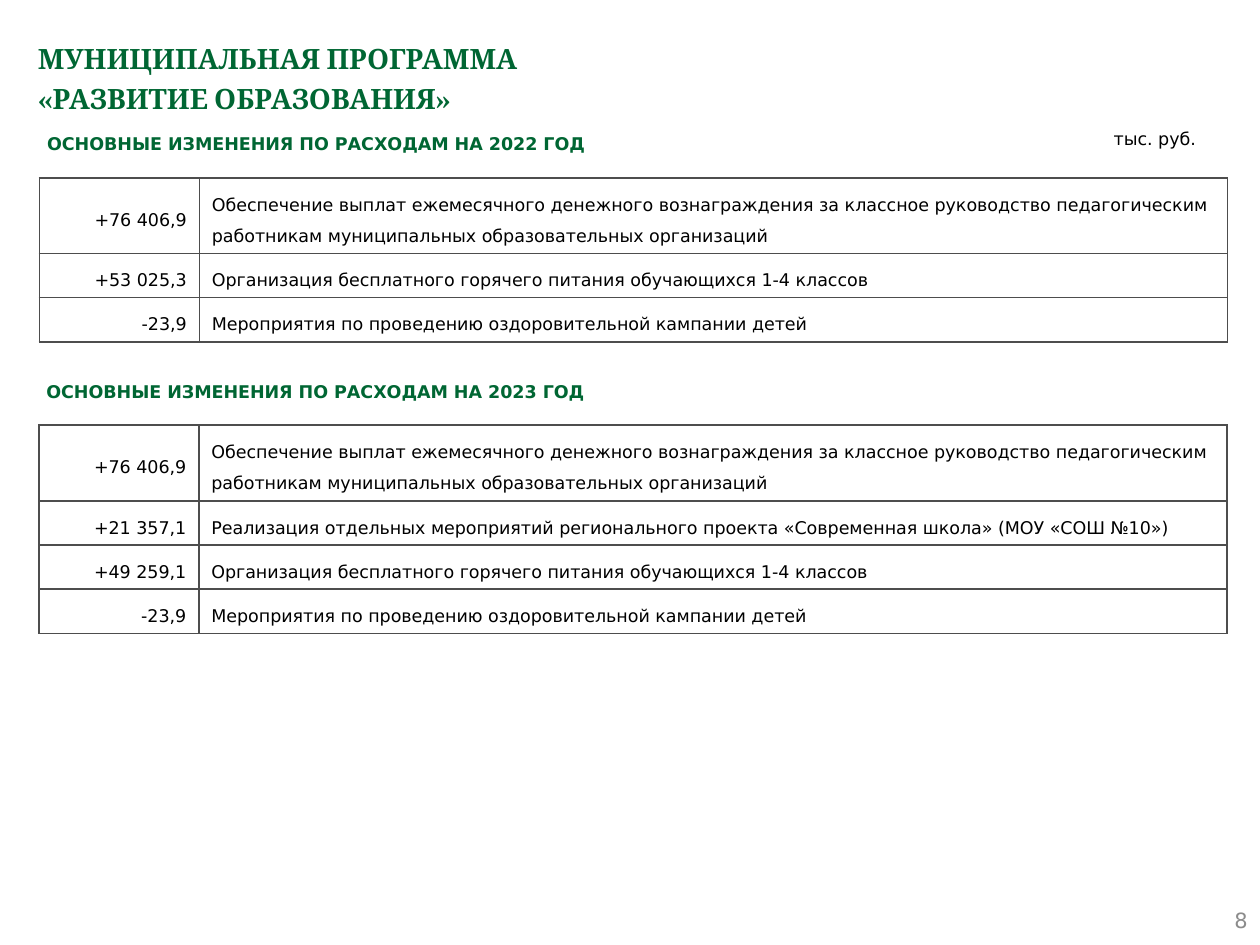
from lxml.etree import SubElement
from pptx import Presentation
from pptx.dml.color import RGBColor
from pptx.enum.shapes import MSO_SHAPE
from pptx.enum.text import MSO_ANCHOR, MSO_AUTO_SIZE, PP_ALIGN
from pptx.oxml.ns import qn
from pptx.util import Pt

GREEN, BLACK, GRAY, BORDER = "006633", "000000", "8C8C8C", "4D4D4D"

TEACHER_PAY = ("Обеспечение выплат ежемесячного денежного вознаграждения за классное "
               "руководство педагогическим работникам муниципальных образовательных организаций")
HOT_MEALS = "Организация бесплатного горячего питания обучающихся 1-4 классов"
SUMMER_CAMP = "Мероприятия по проведению оздоровительной кампании детей"
MODERN_SCHOOL = ("Реализация отдельных мероприятий регионального проекта "
                 "«Современная школа» (МОУ «СОШ №10»)")

CHANGES_2022 = [("+76 406,9", TEACHER_PAY), ("+53 025,3", HOT_MEALS), ("-23,9", SUMMER_CAMP)]
CHANGES_2023 = [("+76 406,9", TEACHER_PAY), ("+21 357,1", MODERN_SCHOOL),
                ("+49 259,1", HOT_MEALS), ("-23,9", SUMMER_CAMP)]


def color(hex_string):
    return RGBColor.from_string(hex_string)


class BudgetSlide:
    font_name = "DejaVu Sans"
    column_widths = (91.4, 587.5)

    def __init__(self, slide):
        self.slide = slide

    def set_text(self, frame, text, size=10, ink=BLACK, bold=False, align=PP_ALIGN.LEFT,
                 anchor=MSO_ANCHOR.MIDDLE, spacing=1.0, font_name=None):
        frame.text = text
        frame.word_wrap = True
        frame.vertical_anchor = anchor
        paragraph = frame.paragraphs[0]
        paragraph.alignment = align
        paragraph.line_spacing = spacing
        font = paragraph.font
        font.name = font_name or self.font_name
        font.size = Pt(size)
        font.bold = bold
        font.color.rgb = color(ink)
        return paragraph

    def title(self, text, left, top, width, height):
        shape = self.slide.shapes.title
        shape.left, shape.top, shape.width, shape.height = map(Pt, (left, top, width, height))
        self.set_text(shape.text_frame, text, 16, GREEN, True, spacing=1.2, font_name="Cambria")
        shape.text_frame.auto_size = MSO_AUTO_SIZE.NONE

    def label(self, text, left, top, width, height, **style):
        box = self.slide.shapes.add_textbox(Pt(left), Pt(top), Pt(width), Pt(height))
        self.set_text(box.text_frame, text, **style)

    def heading(self, text, left, top):
        shape = self.slide.shapes.add_shape(MSO_SHAPE.PENTAGON, Pt(left), Pt(top), Pt(383), Pt(31))
        shape.adjustments[0] = 0
        shape.shadow.inherit = False
        shape.fill.background()
        shape.line.fill.background()
        self.set_text(shape.text_frame, text, ink=GREEN, bold=True)

    def table(self, rows, left, top, row_heights):
        frame = self.slide.shapes.add_table(len(rows), 2, Pt(left), Pt(top),
                                            Pt(sum(self.column_widths)), Pt(sum(row_heights)))
        table = frame.table
        table.first_row = table.horz_banding = False
        for column, width in zip(table.columns, self.column_widths):
            column.width = Pt(width)
        for row, height, texts in zip(table.rows, row_heights, rows):
            row.height = Pt(height)
            for cell, text, align in zip(row.cells, texts, (PP_ALIGN.RIGHT, PP_ALIGN.LEFT)):
                paragraph = self.set_text(cell.text_frame, text, align=align, spacing=1.5)
                paragraph.space_after = Pt(10)
                cell.vertical_anchor = MSO_ANCHOR.MIDDLE
                self.border(cell)
                cell.fill.background()

    def border(self, cell):
        properties = cell._tc.get_or_add_tcPr()
        for side in ("a:lnL", "a:lnR", "a:lnT", "a:lnB"):
            line = SubElement(properties, qn(side), w=str(Pt(1)))
            fill = SubElement(line, qn("a:solidFill"))
            SubElement(fill, qn("a:srgbClr"), val=BORDER)


def main():
    presentation = Presentation()
    presentation.slide_width, presentation.slide_height = Pt(720), Pt(540)
    page = BudgetSlide(presentation.slides.add_slide(presentation.slide_layouts[5]))

    page.title("МУНИЦИПАЛЬНАЯ ПРОГРАММА \v«РАЗВИТИЕ ОБРАЗОВАНИЯ»", 14.4, 14.4, 692, 57)
    page.label("8", 552, 511, 168, 29, size=12, ink=GRAY, align=PP_ALIGN.RIGHT)
    page.heading("ОСНОВНЫЕ ИЗМЕНЕНИЯ ПО РАСХОДАМ НА 2022 ГОД", 19.8, 66.5)
    page.table(CHANGES_2022, 22.5, 101.6, [42, 24.7, 24.7])
    page.label("тыс. руб.", 629.3, 67, 73, 21.6, anchor=MSO_ANCHOR.TOP, spacing=1.2)
    page.heading("ОСНОВНЫЕ ИЗМЕНЕНИЯ ПО РАСХОДАМ НА 2023 ГОД", 19.4, 208)
    page.table(CHANGES_2023, 22.2, 242.8, [43.4, 25.1, 25.1, 25.1])
    presentation.save("out.pptx")


if __name__ == "__main__":
    main()
